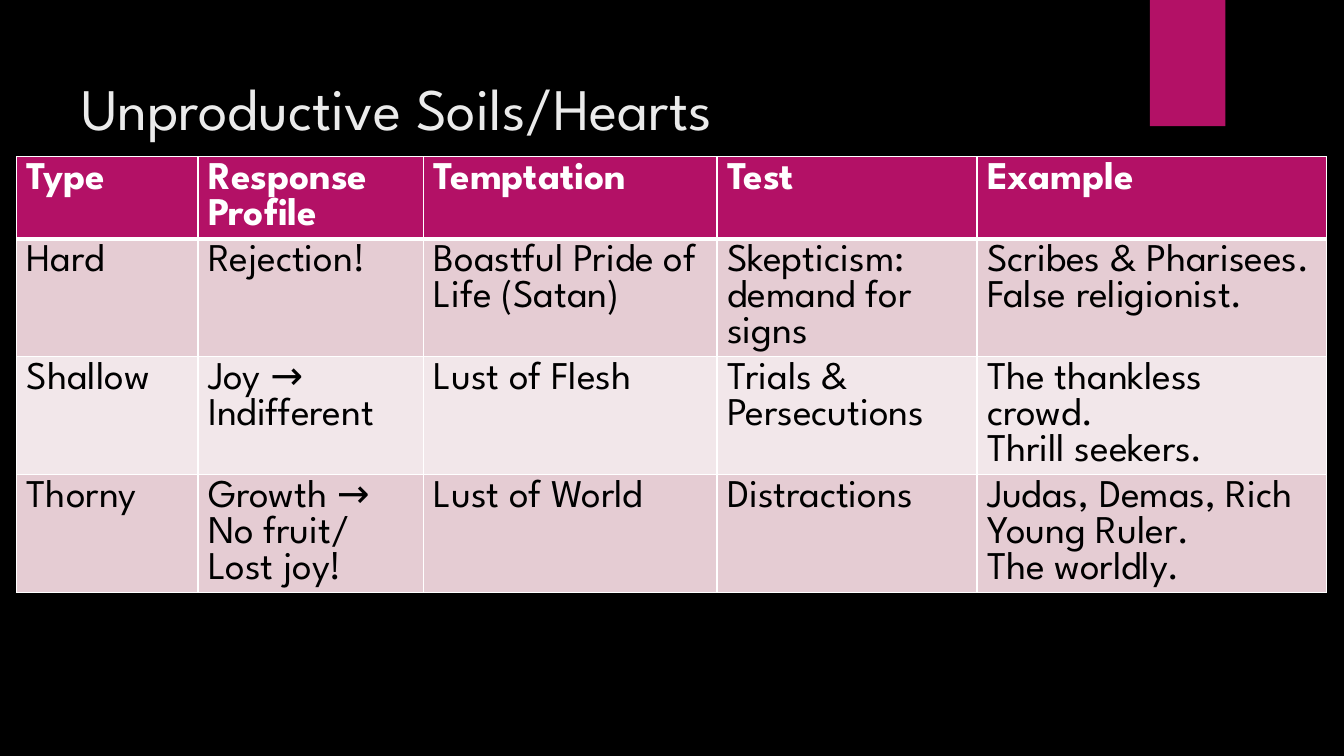
from dataclasses import dataclass

from lxml import etree
from pptx import Presentation
from pptx import util as u
from pptx.dml.color import RGBColor
from pptx.enum import shapes, text
from pptx.oxml import ns

FONT = "League Spartan"
PINK, WHITE, BLACK = "B31166", "FFFFFF", "000000"
ROSE, PALE = "E5CCD3", "F2E7EA"
WIDTHS = (4.57, 5.69, 7.39, 6.55, 8.81)


@dataclass
class Row:
    texts: tuple[str, ...]
    fill: str
    height: float = 2.97
    ink: str = BLACK
    bold: bool = False
    top: float = 1
    bottom: float = 1


ROWS = (
    Row(("Type", "Response Profile", "Temptation", "Test", "Example"),
        PINK, 2.06, WHITE, True, bottom=3),
    Row(("Hard", "Rejection!", "Boastful Pride of Life (Satan)",
         "Skepticism: demand for signs",
         "Scribes & Pharisees. False religionist."), ROSE, top=3),
    Row(("Shallow", "Joy → Indifferent", "Lust of Flesh",
         "Trials & Persecutions",
         "The thankless crowd.\nThrill seekers."), PALE),
    Row(("Thorny", "Growth → No fruit/\nLost joy!", "Lust of World",
         "Distractions",
         "Judas, Demas, Rich Young Ruler.\nThe worldly."), ROSE),
)


def paint(fill, color: str) -> None:
    fill.solid()
    fill.fore_color.rgb = RGBColor.from_string(color)


def style(frame, size: float, color: str, bold: bool = False) -> None:
    for para in frame.paragraphs:
        para.alignment = text.PP_ALIGN.LEFT
        for run in para.runs:
            run.font.name = FONT
            run.font.size = u.Pt(size)
            run.font.bold = bold
            run.font.color.rgb = RGBColor.from_string(color)


def edge(cell, top: float, bottom: float) -> None:
    """Put white borders around a cell, ahead of its fill."""
    props = cell._tc.get_or_add_tcPr()
    sides = (("L", 1), ("R", 1), ("T", top), ("B", bottom))
    for spot, (side, width) in enumerate(sides):
        line = etree.Element(ns.qn(f"a:ln{side}"), w=str(u.Pt(width)))
        fill = etree.SubElement(line, ns.qn("a:solidFill"))
        etree.SubElement(fill, ns.qn("a:srgbClr"), val=WHITE)
        props.insert(spot, line)


def add_grid(slide) -> None:
    frame = slide.shapes.add_table(
        len(ROWS), len(WIDTHS), u.Cm(0.42), u.Cm(3.95),
        u.Cm(sum(WIDTHS)), u.Cm(sum(row.height for row in ROWS)))
    table = frame.table
    for col, width in zip(table.columns, WIDTHS):
        col.width = u.Cm(width)
    for line, row in zip(table.rows, ROWS):
        line.height = u.Cm(row.height)
        for cell, words in zip(line.cells, row.texts):
            cell.text_frame.text = words
            style(cell.text_frame, 28, row.ink, row.bold)
            paint(cell.fill, row.fill)
            edge(cell, row.top, row.bottom)


def add_title(slide) -> None:
    title = slide.shapes.title
    title.left, title.top = u.Cm(1.8), u.Cm(1.27)
    title.width, title.height = u.Cm(26.14), u.Cm(3.89)
    frame = title.text_frame
    frame.text = "Unproductive Soils/Hearts"
    frame.word_wrap = True
    frame.vertical_anchor = text.MSO_ANCHOR.TOP
    frame.margin_top = u.Cm(0.53)
    style(frame, 42, "EBEBEB")


def add_tab(slide) -> None:
    tab = slide.shapes.add_shape(
        shapes.MSO_SHAPE.RECTANGLE, u.Cm(28.98), 0, u.Cm(1.9), u.Cm(3.18))
    tab.shadow.inherit = False
    paint(tab.fill, PINK)
    tab.line.fill.background()


def main() -> None:
    deck = Presentation()
    deck.slide_width, deck.slide_height = u.Cm(33.87), u.Cm(19.05)
    slide = deck.slides.add_slide(deck.slide_layouts[5])
    paint(slide.background.fill, BLACK)
    add_tab(slide)
    add_title(slide)
    add_grid(slide)
    deck.save("out.pptx")


if __name__ == "__main__":
    main()
